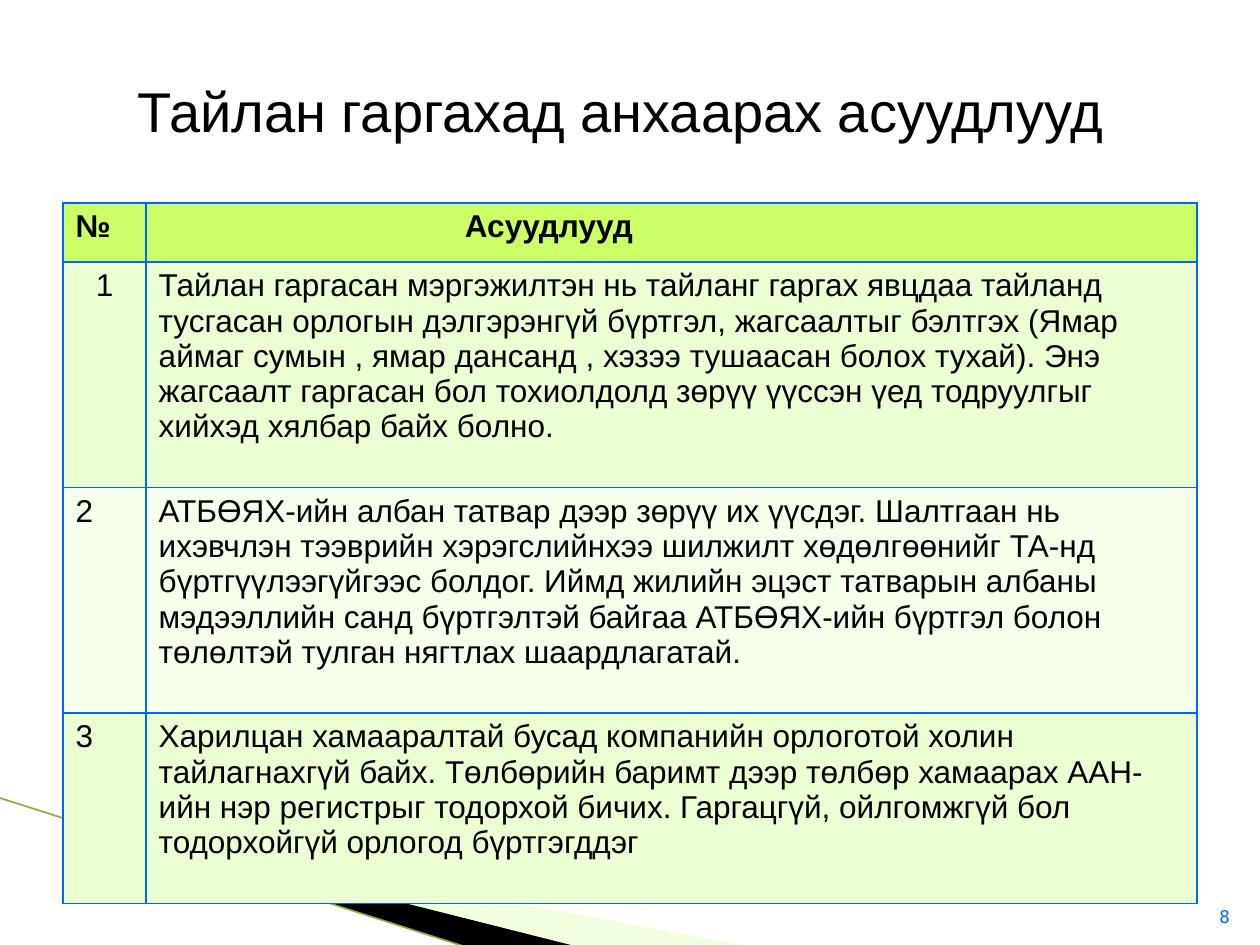
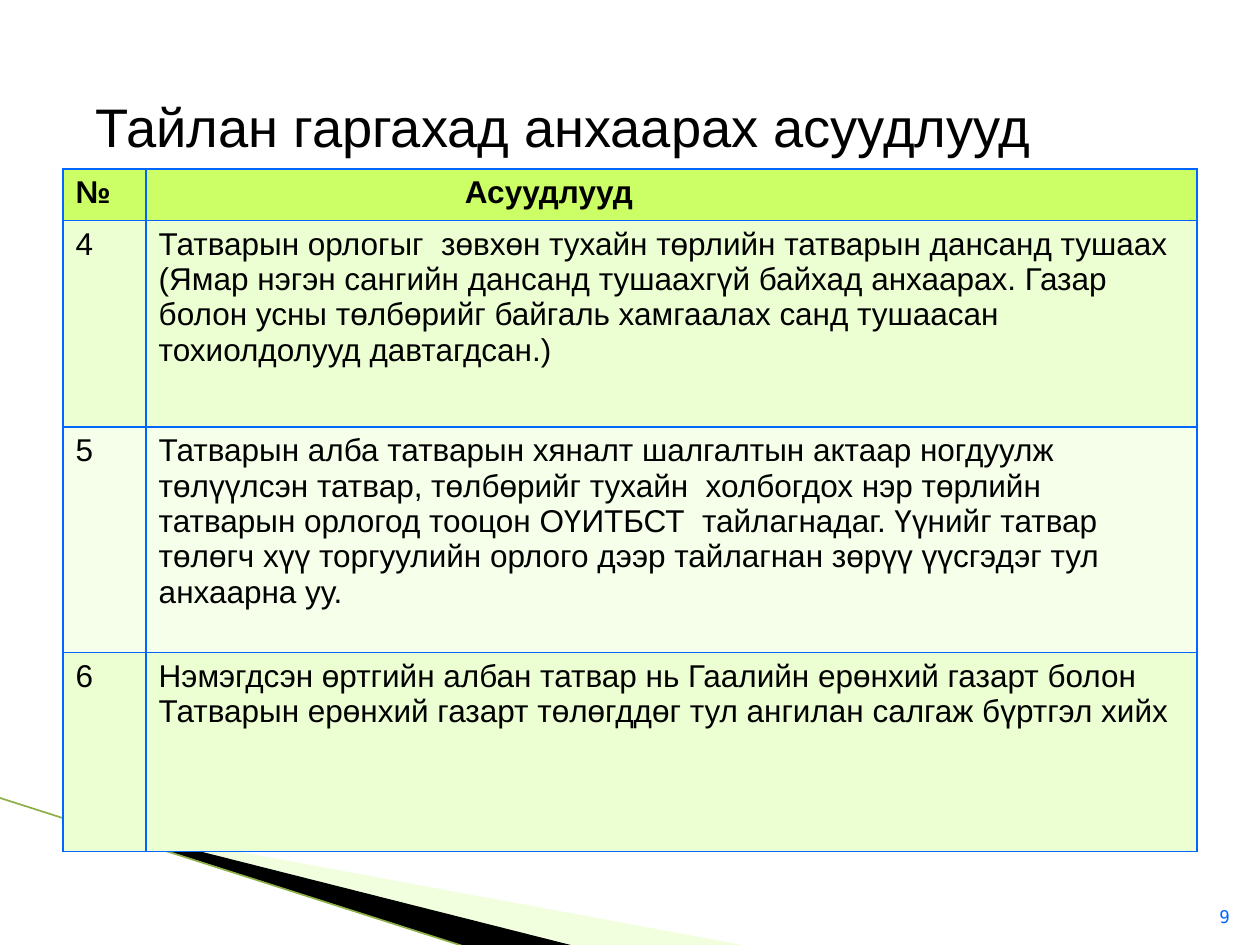
from lxml import etree
from pptx import Presentation
from pptx.dml.color import RGBColor
from pptx.enum.shapes import MSO_CONNECTOR
from pptx.enum.text import MSO_ANCHOR, MSO_AUTO_SIZE, PP_ALIGN
from pptx.oxml import parse_xml
from pptx.oxml.ns import nsdecls, qn
from pptx.util import Inches, Pt

BLACK = RGBColor(0x00, 0x00, 0x00)
BLUE = RGBColor(0x00, 0x66, 0xFF)
HEADER_GREEN = RGBColor(0xCC, 0xFF, 0x66)
BAND_GREENS = [RGBColor(0xEC, 0xFF, 0xD3), RGBColor(0xF6, 0xFF, 0xEA)]
WEDGE_GREEN = RGBColor(0xE0, 0xFF, 0xB0)
LINE_GREEN = RGBColor(0x8C, 0xAF, 0x46)

TEXT_FONT = "Arial"
NUMBER_FONT = "DejaVu Sans Mono"
TITLE = "Тайлан гаргахад анхаарах асуудлууд"
HEADER = ("№", "Асуудлууд")
HEADER_INDENT = 2.53
COLUMN_WIDTHS = (0.66, 8.34)

REPORT_ISSUES = [
    ("1", "Тайлан гаргасан мэргэжилтэн нь тайланг гаргах явцдаа тайланд тусгасан "
          "орлогын дэлгэрэнгүй бүртгэл, жагсаалтыг бэлтгэх (Ямар аймаг сумын , ямар "
          "дансанд , хэзээ тушаасан болох тухай). Энэ жагсаалт гаргасан бол тохиолдолд "
          "зөрүү үүссэн үед тодруулгыг хийхэд хялбар байх болно."),
    ("2", "АТБӨЯХ-ийн албан татвар дээр зөрүү их үүсдэг. Шалтгаан нь  ихэвчлэн "
          "тээврийн хэрэгслийнхээ шилжилт хөдөлгөөнийг ТА-нд бүртгүүлээгүйгээс болдог. "
          "Иймд жилийн эцэст татварын албаны мэдээллийн санд бүртгэлтэй байгаа "
          "АТБӨЯХ-ийн бүртгэл болон төлөлтэй тулган нягтлах шаардлагатай."),
    ("3", "Харилцан хамааралтай бусад компанийн орлоготой холин тайлагнахгүй байх. "
          "Төлбөрийн баримт дээр төлбөр хамаарах ААН-ийн нэр регистрыг тодорхой бичих. "
          "Гаргацгүй, ойлгомжгүй бол  тодорхойгүй орлогод бүртгэгддэг"),
]
PAYMENT_ISSUES = [
    ("4", "Татварын орлогыг  зөвхөн тухайн төрлийн татварын дансанд тушаах (Ямар нэгэн "
          "сангийн дансанд тушаахгүй байхад анхаарах. Газар болон усны төлбөрийг байгаль "
          "хамгаалах санд тушаасан тохиолдолууд давтагдсан.)"),
    ("5", "Татварын алба татварын хяналт шалгалтын актаар ногдуулж төлүүлсэн татвар, "
          "төлбөрийг тухайн  холбогдох нэр төрлийн татварын орлогод тооцон ОҮИТБСТ  "
          "тайлагнадаг. Үүнийг татвар төлөгч хүү торгуулийн орлого дээр тайлагнан зөрүү "
          "үүсгэдэг тул анхаарна уу."),
    ("6", "Нэмэгдсэн өртгийн албан татвар нь Гаалийн ерөнхий газарт болон Татварын "
          "ерөнхий газарт төлөгддөг тул ангилан салгаж бүртгэл хийх"),
]


def format_font(font, name, size, color, bold=False):
    font.name = name
    font.size = Pt(size)
    font.bold = bold
    font.color.rgb = color


def set_frame(freeform, frame):
    """Give the freeform a new frame while its outline stays in place."""
    left, top, width, height = (Inches(length) for length in frame)
    shift_x, shift_y = freeform.left - left, freeform.top - top
    outline = freeform._element.find(".//" + qn("a:path"))
    outline.set("w", str(width))
    outline.set("h", str(height))
    for point in outline.iter(qn("a:pt")):
        point.set("x", str(int(point.get("x")) + shift_x))
        point.set("y", str(int(point.get("y")) + shift_y))
    freeform.left, freeform.top = left, top
    freeform.width, freeform.height = width, height


def add_wedge(slide, points, frame, color, opacity=100):
    corners = [(Inches(x), Inches(y)) for x, y in points]
    builder = slide.shapes.build_freeform(*corners[0])
    builder.add_line_segments(corners[1:], close=True)
    wedge = builder.convert_to_shape()
    set_frame(wedge, frame)
    wedge.shadow.inherit = False
    wedge.line.fill.background()
    wedge.fill.solid()
    wedge.fill.fore_color.rgb = color
    if opacity < 100:
        fill_color = wedge._element.spPr.find(qn("a:solidFill"))[0]
        etree.SubElement(fill_color, qn("a:alpha"), val=str(opacity * 1000))


def add_corner_decoration(slide):
    add_wedge(slide, [(0.55, 6.51), (5.95, 7.51), (4.56, 7.51), (0.55, 6.5)],
              (0.78, 5.47, 4.16, 1.58), WEDGE_GREEN, 40)
    add_wedge(slide, [(0.53, 6.49), (4.57, 7.51), (3.72, 7.52), (0.54, 6.5)],
              (-0.06, 6.33, 4.16, 0.92), BLACK)
    edge = slide.shapes.add_connector(
        MSO_CONNECTOR.STRAIGHT, Inches(-0.01), Inches(6.33), Inches(3.71), Inches(7.52))
    edge.line.color.rgb = LINE_GREEN
    edge.line.width = Pt(0.95)
    etree.SubElement(edge._element.spPr, qn("a:effectLst"))


def set_title(slide, top, height, size, indent, margin_top):
    title = slide.shapes.title
    title.left, title.top = Inches(0.5), Inches(top)
    title.width, title.height = Inches(9), Inches(height)
    text_frame = title.text_frame
    text_frame.text = TITLE
    text_frame.auto_size = MSO_AUTO_SIZE.NONE
    text_frame.vertical_anchor = MSO_ANCHOR.MIDDLE
    text_frame.margin_left = Inches(indent)
    text_frame.margin_top = Inches(margin_top)
    paragraph = text_frame.paragraphs[0]
    paragraph.alignment = PP_ALIGN.LEFT
    format_font(paragraph.runs[0].font, TEXT_FONT, size, BLACK)


def add_page_number(slide, number):
    box = slide.shapes.add_textbox(Inches(9.46), Inches(7.01), Inches(0.4), Inches(0.4))
    text_frame = box.text_frame
    text_frame.word_wrap = True
    text_frame.vertical_anchor = MSO_ANCHOR.BOTTOM
    text_frame.text = str(number)
    paragraph = text_frame.paragraphs[0]
    paragraph.alignment = PP_ALIGN.RIGHT
    format_font(paragraph.runs[0].font, NUMBER_FONT, 10, BLUE)


def set_borders(cell):
    """Put the blue border before the fill, as the schema orders them."""
    properties = cell._tc.get_or_add_tcPr()
    for position, side in enumerate(("lnL", "lnR", "lnT", "lnB")):
        properties.insert(position, parse_xml(
            f'<a:{side} {nsdecls("a")} w="{Pt(1)}"><a:solidFill>'
            f'<a:srgbClr val="{BLUE}"/></a:solidFill></a:{side}>'))


def fill_cell(cell, text, color, bold):
    cell.text = text
    cell.fill.solid()
    cell.fill.fore_color.rgb = color
    set_borders(cell)
    format_font(cell.text_frame.paragraphs[0].runs[0].font, TEXT_FONT, 18, BLACK, bold)


def add_issue_table(slide, top, row_heights, issues):
    rows = [HEADER, *issues]
    table = slide.shapes.add_table(
        len(rows), len(HEADER), Inches(0.5), Inches(top),
        Inches(sum(COLUMN_WIDTHS)), Inches(sum(row_heights))).table
    table.first_row = table.horz_banding = False
    for column, width in zip(table.columns, COLUMN_WIDTHS):
        column.width = Inches(width)
    for row_index, (height, texts) in enumerate(zip(row_heights, rows)):
        table.rows[row_index].height = Inches(height)
        is_header = row_index == 0
        color = HEADER_GREEN if is_header else BAND_GREENS[(row_index - 1) % 2]
        for column_index, text in enumerate(texts):
            fill_cell(table.cell(row_index, column_index), text, color, is_header)
    table.cell(0, 1).margin_left = Inches(HEADER_INDENT)
    return table


def add_issue_slide(presentation, number):
    slide = presentation.slides.add_slide(presentation.slide_layouts[5])
    add_corner_decoration(slide)
    add_page_number(slide, number)
    return slide


def main():
    presentation = Presentation()
    presentation.slide_width, presentation.slide_height = Inches(10), Inches(7.5)

    slide = add_issue_slide(presentation, 8)
    set_title(slide, top=0.5, height=0.75, size=32, indent=0.59, margin_top=0.05)
    table = add_issue_table(slide, 1.61, (0.47, 1.79, 1.79, 1.51), REPORT_ISSUES)
    table.cell(1, 0).text_frame.paragraphs[0].alignment = PP_ALIGN.CENTER

    slide = add_issue_slide(presentation, 9)
    set_title(slide, top=0.3, height=1.25, size=31, indent=0.26, margin_top=0.2)
    add_issue_table(slide, 1.34, (0.41, 1.64, 1.79, 1.58), PAYMENT_ISSUES)

    presentation.save("out.pptx")


if __name__ == "__main__":
    main()
